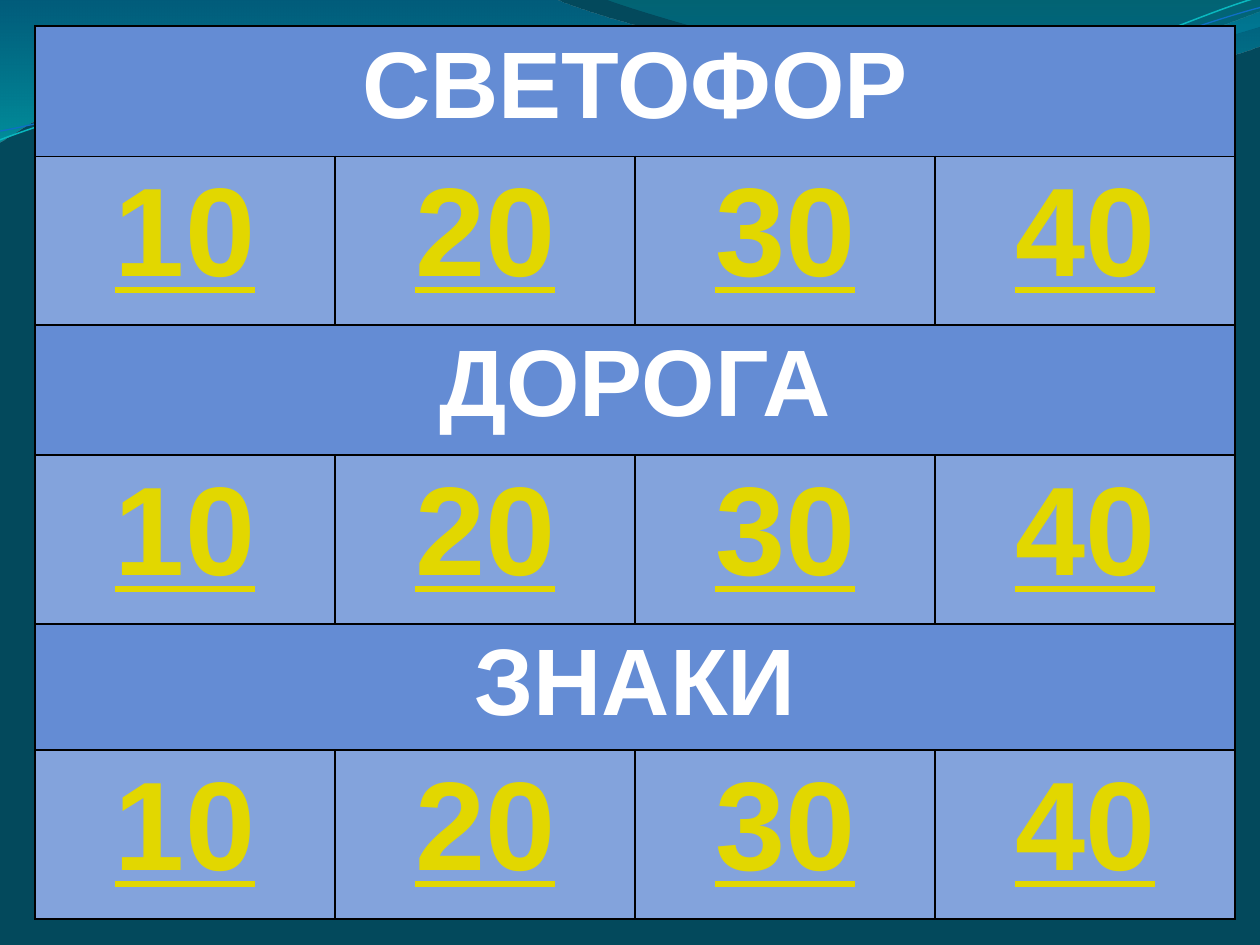
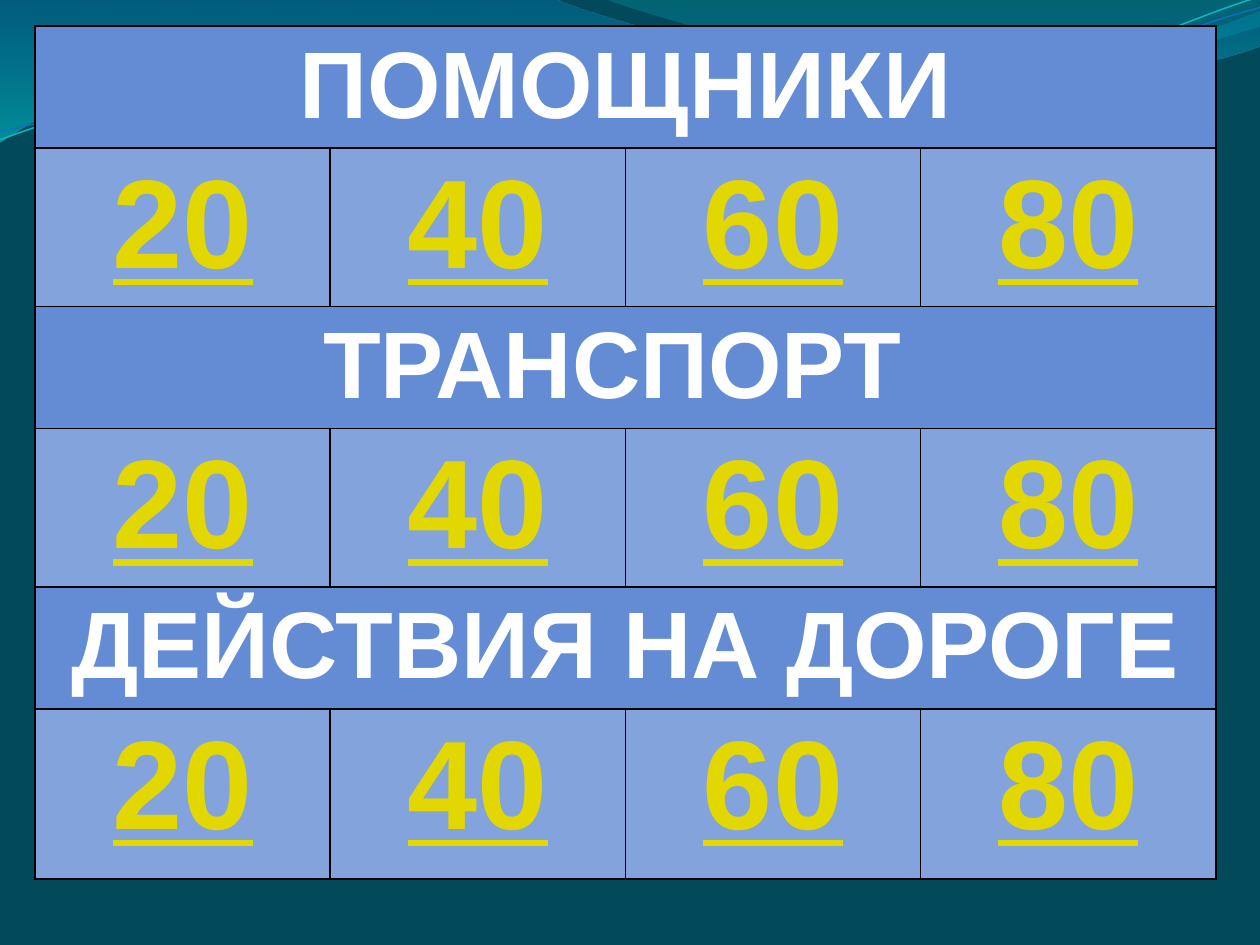
from pptx import Presentation
from pptx.dml.color import RGBColor
from pptx.enum.text import PP_ALIGN
from pptx.oxml.ns import qn
from pptx.util import Pt
from lxml.etree import SubElement, fromstring


def color(hex_string):
    return RGBColor.from_string(hex_string)


# Shared look
BACKGROUND = "03495C"
HEADING_FILL = "648CD4"
SCORE_FILL = "83A3DC"
BORDER = "000000"
HEADING_FONT = {"name": "Arial", "size": Pt(54), "bold": True}
SCORE_FONT = {"name": "Arial", "size": Pt(72), "bold": True, "underline": True}
HEADING_COLOR = "FFFFFF"
SCORE_COLOR = "E2D700"
TABLE_LEFT, TABLE_TOP = 20, 15

# Wave segments: two numbers make a straight line, six make a Bezier curve.
# Bands hold (position, colour, opacity in percent); strands hold (colour, width).
WAVES = [
    {"start": (0, -0.7),
     "segments": [(316.8, -0.7),
                  (342.7, 12.2, 478.1, 45.4, 545.8, 45.4),
                  (614.2, 45.4, 689.8, 18.7, 720, 6.5),
                  (720.7, 25.9),
                  (707.8, 31.7, 626.4, 54.7, 537.1, 54),
                  (447.8, 54, 275, 20.2, 185, 24.5),
                  (92.9, 25.2, 33.1, 59.8, -0.7, 81.4)],
     "band": [(0, "0074A1", 45), (1, "00C6CF", 55)]},
    {"start": (344.9, -0.7),
     "segments": [(366.5, 7.9, 491, 44.6, 553.7, 46.8),
                  (616.3, 49.7, 691.9, 23, 720, 15.1),
                  (720, 0)],
     "band": [(0, "00A1A9", 30), (0.8, "008BBF", 45)]},
    {"start": (0, 79.9),
     "segments": [(34.6, 67, 113.8, 41, 199.4, 37.4),
                  (284.4, 33.8, 427, 64.1, 513.4, 57.6),
                  (599.8, 51.1, 675.4, 10.8, 718.6, -1.4)],
     "strand": ("0AB8BF", 0.85)},
    {"start": (0, 74.9),
     "segments": [(33.8, 69.1, 118.1, 43.9, 203.8, 40.3),
                  (290.2, 36.7, 429.8, 59.8, 516.2, 54),
                  (601.9, 48.2, 677.5, 15.1, 720, 4.3)],
     "strand": ("0F6FC6", 0.75)},
]

BOARDS = [
    {"headings": ["СВЕТОФОР", "ДОРОГА", "ЗНАКИ"],
     "scores": [10, 20, 30, 40],
     "column": 171.45,
     "rows": [74.3, 96.5, 74.3, 96.5, 72, 96.5]},
    {"headings": ["ПОМОЩНИКИ", "ТРАНСПОРТ ", "ДЕЙСТВИЯ НА ДОРОГЕ"],
     "scores": [20, 40, 60, 80],
     "column": 168.7,
     "rows": [69.7, 90.6, 69.7, 90.6, 69.7, 97.1]},
]


def write_cell(cell, text, fill, font_color, font_format):
    cell.fill.solid()
    cell.fill.fore_color.rgb = color(fill)
    para = cell.text_frame.paragraphs[0]
    para.alignment = PP_ALIGN.CENTER
    span = para.add_run()
    span.text = text
    for name, value in font_format.items():
        setattr(span.font, name, value)
    span.font.color.rgb = color(font_color)


deck = Presentation()
deck.slide_width, deck.slide_height = Pt(720), Pt(540)

# Background, shared by all pages
backdrop = deck.slide_master.background.fill
backdrop.solid()
backdrop.fore_color.rgb = color(BACKGROUND)

for board in BOARDS:
    page = deck.slides.add_slide(deck.slide_layouts[6])

    # Waves along the top edge
    for wave in WAVES:
        pen = page.shapes.build_freeform(*map(Pt, wave["start"]))
        points = [(Pt(segment[i]), Pt(segment[i + 1]))
                  for segment in wave["segments"]
                  for i in range(0, len(segment), 2)]
        pen.add_line_segments(points, close="band" in wave)
        shape = pen.convert_to_shape()
        shape.shadow.inherit = False

        # Turn each triple of straight steps into one curve
        outline = next(shape._element.iter(qn("a:path")))
        steps = iter(outline.findall(qn("a:lnTo")))
        for segment in wave["segments"]:
            step = next(steps)
            if len(segment) == 6:
                step.tag = qn("a:cubicBezTo")
                for extra in (next(steps), next(steps)):
                    step.append(extra[0])
                    outline.remove(extra)

        if "band" in wave:
            shape.line.fill.background()
            shape.fill.gradient()
            shape.fill.gradient_angle = 270
            for stop, (position, tint, opacity) in zip(shape.fill.gradient_stops, wave["band"]):
                stop.position = position
                stop.color.rgb = color(tint)
            for tint_xml, band_stop in zip(shape._element.iter(qn("a:srgbClr")), wave["band"]):
                SubElement(tint_xml, qn("a:alpha"), val=str(band_stop[2] * 1000))
        else:
            shape.fill.background()
            tint, width = wave["strand"]
            shape.line.color.rgb = color(tint)
            shape.line.width = Pt(width)

    # Score table: a heading row above a row of scores for each topic
    rows, scores = board["rows"], board["scores"]
    table = page.shapes.add_table(
        len(rows), len(scores), Pt(TABLE_LEFT), Pt(TABLE_TOP),
        Pt(board["column"] * len(scores)), Pt(sum(rows))).table
    table.first_row = table.horz_banding = False
    for column in table.columns:
        column.width = Pt(board["column"])
    for row, height in zip(table.rows, rows):
        row.height = Pt(height)

    for topic, heading in enumerate(board["headings"]):
        top = 2 * topic
        table.cell(top, 0).merge(table.cell(top, len(scores) - 1))
        write_cell(table.cell(top, 0), heading, HEADING_FILL, HEADING_COLOR, HEADING_FONT)
        for place, score in enumerate(scores):
            write_cell(table.cell(top + 1, place), str(score),
                       SCORE_FILL, SCORE_COLOR, SCORE_FONT)

    # Cell borders
    for cell in table.iter_cells():
        properties = cell._tc.get_or_add_tcPr()
        for order, side in enumerate(("lnL", "lnR", "lnT", "lnB")):
            properties.insert(order, fromstring(
                f'<a:{side} xmlns:a="http://schemas.openxmlformats.org/drawingml/2006/main"'
                f' w="{Pt(1)}"><a:solidFill><a:srgbClr val="{BORDER}"/></a:solidFill></a:{side}>'))

deck.save("out.pptx")
